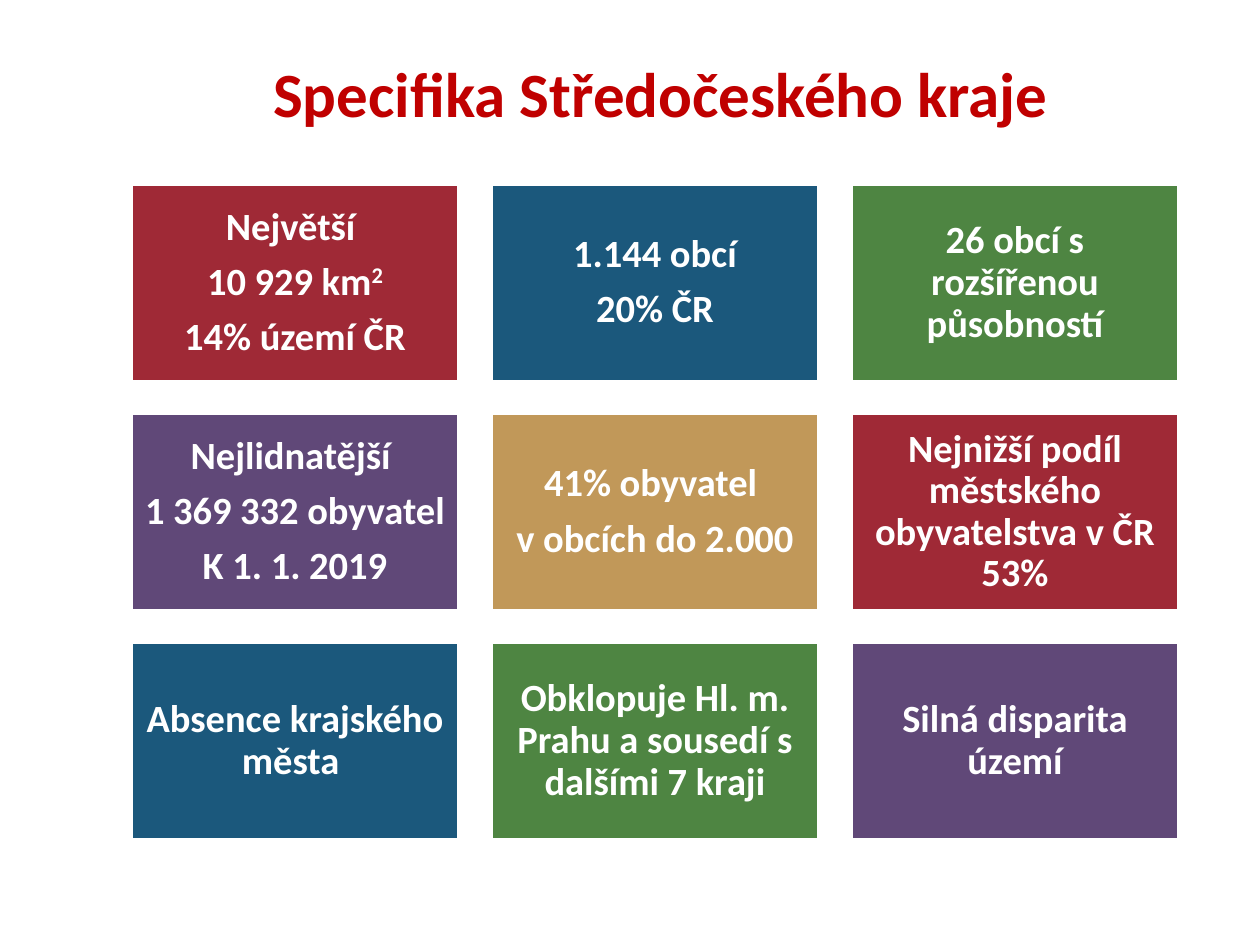
from pptx import Presentation
from pptx.dml.color import RGBColor
from pptx.enum.shapes import MSO_SHAPE as Shape
from pptx.enum.text import MSO_ANCHOR as Anchor, PP_ALIGN as Align
from pptx.util import Inches, Pt

PX_PER_INCH = 126
COLORS = {
    "title": "C00000",
    "white": "FFFFFF",
    "red": "9F2936",
    "blue": "1B587C",
    "green": "4E8542",
    "purple": "604878",
    "sand": "C19859",
}
COLUMNS = 3
LEFT, TOP = 132, 185
WIDTH, HEIGHT = 326, 196
COLUMN_STEP, ROW_STEP = 360, 229
TILES = [
    ("red", ["Největší ", "10 929 km^2", "14% území ČR"]),
    ("blue", ["1.144 obcí", "20% ČR"]),
    ("green", ["26 obcí s rozšířenou působností"]),
    ("purple", ["Nejlidnatější ", "1 369 332 obyvatel", "K 1. 1. 2019"]),
    ("sand", ["41% obyvatel ", "v obcích do 2.000"]),
    ("red", ["Nejnižší podíl městského obyvatelstva v ČR 53%"]),
    ("blue", ["Absence krajského města "]),
    ("green", ["Obklopuje Hl. m. Prahu a sousedí s dalšími 7 kraji"]),
    ("purple", ["Silná disparita území"]),
]


def px(length):
    return round(length * Inches(1) / PX_PER_INCH)


def color(name):
    return RGBColor.from_string(COLORS[name])


class SlideBuilder:
    font_name = "Calibri"
    title_size = 36
    tile_size = 22
    line_spacing = 0.9
    paragraph_gap = 7.7

    def __init__(self, slide):
        self.slide = slide

    def place(self, shape, left, top, width, height):
        shape.left, shape.top = px(left), px(top)
        shape.width, shape.height = px(width), px(height)

    def format_paragraph(self, para, size, color_name):
        para.alignment = Align.CENTER
        para.line_spacing = self.line_spacing
        for span in para.runs:
            span.font.name = self.font_name
            span.font.size = Pt(size)
            span.font.bold = True
            span.font.color.rgb = color(color_name)

    def title(self, text, left, top, width, height, indent):
        title = self.slide.shapes.title
        self.place(title, left, top, width, height)
        frame = title.text_frame
        frame.text = text
        frame.vertical_anchor = Anchor.MIDDLE
        frame.margin_left = px(indent)
        self.format_paragraph(frame.paragraphs[0], self.title_size, "title")

    def tile(self, lines, fill, left, top):
        box = self.slide.shapes.add_shape(
            Shape.RECTANGLE, px(left), px(top), px(WIDTH), px(HEIGHT)
        )
        box.shadow.inherit = False
        box.fill.solid()
        box.fill.fore_color.rgb = color(fill)
        box.line.color.rgb = color("white")
        box.line.width = Pt(1)
        frame = box.text_frame
        frame.word_wrap = True
        frame.vertical_anchor = Anchor.MIDDLE
        frame.margin_left = frame.margin_right = px(11)
        frame.margin_top = frame.margin_bottom = px(11)
        for index, line in enumerate(lines):
            para = frame.paragraphs[0] if index == 0 else frame.add_paragraph()
            base, _, raised = line.partition("^")
            para.text = base
            if raised:
                span = para.add_run()
                span.text = raised
                span.font._element.set("baseline", "30000")
            para.space_after = Pt(self.paragraph_gap)
            self.format_paragraph(para, self.tile_size, "white")


def main():
    deck = Presentation()
    deck.slide_width, deck.slide_height = px(1260), px(945)
    page = SlideBuilder(deck.slides.add_slide(deck.slide_layouts[5]))
    page.title("Specifika Středočeského kraje", 87, 50, 1086, 95, indent=74)
    for index, (fill, lines) in enumerate(TILES):
        row, column = divmod(index, COLUMNS)
        page.tile(lines, fill, LEFT + column * COLUMN_STEP, TOP + row * ROW_STEP)
    deck.save("out.pptx")


if __name__ == "__main__":
    main()
